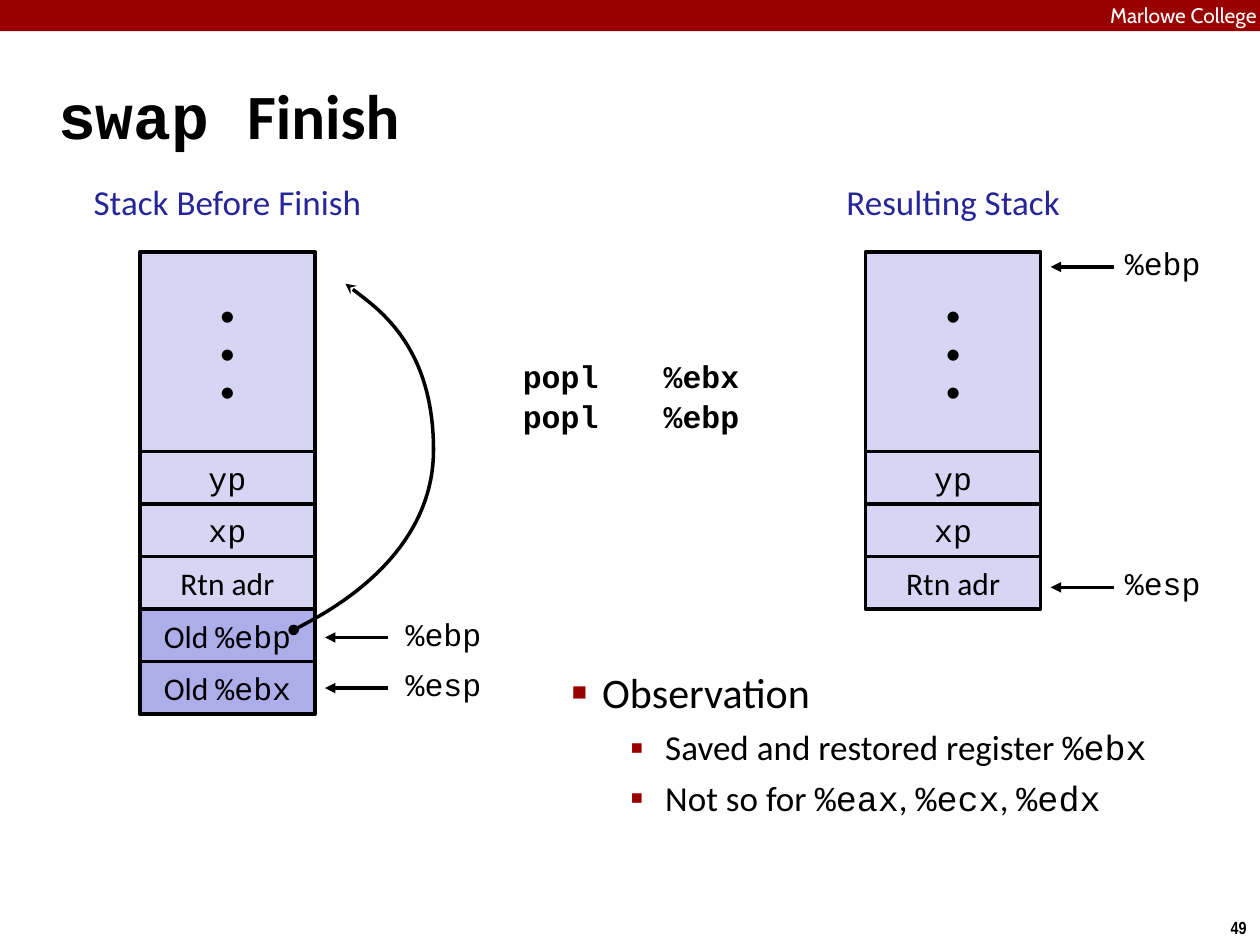
import dataclasses

import lxml.etree
import pptx
import pptx.dml.color
import pptx.enum.shapes
import pptx.enum.text
import pptx.oxml.ns
import pptx.util

Cm = pptx.util.Cm
Align = pptx.enum.text.PP_ALIGN
Anchor = pptx.enum.text.MSO_ANCHOR


@dataclasses.dataclass(frozen=True)
class Theme:
    """Colours, fonts and type sizes of the slide."""
    ink: str = "000000"
    paper: str = "FFFFFF"
    red: str = "990000"
    blue: str = "262699"
    pale: str = "D6D6F4"
    dark: str = "ADADEA"
    sans: str = "Calibri"
    mono: str = "Courier New"
    brand: str = "Cabin"
    small: str = "Arial Narrow"
    title: int = 36
    lead: int = 24
    head: int = 20
    text: int = 18
    bar: int = 12
    page: int = 10
    line: int = 2


T = Theme()


def rgb(code):
    """Turn a hex code into a colour."""
    return pptx.dml.color.RGBColor.from_string(code)


def apply(obj, fmt):
    """Set each attribute that a dict names."""
    for key, val in fmt.items():
        setattr(obj, key, val)


def node(parent, tag, **attrs):
    """Append a drawing element to a parent."""
    item = lxml.etree.SubElement(parent, pptx.oxml.ns.qn("a:" + tag))
    for key, val in attrs.items():
        item.set(key, str(val))
    return item


def place(shape, box):
    """Move a shape to a box given in centimetres."""
    apply(shape, dict(zip(("left", "top", "width", "height"), map(Cm, box))))


def write(para, text, size, color=T.ink, font=T.sans, bold=False, **fmt):
    """Fill a paragraph, with code between backticks in the mono font."""
    apply(para, fmt)
    for num, part in enumerate(text.split("`")):
        if part:
            run = para.add_run()
            run.text = part
            apply(run.font, {"size": pptx.util.Pt(size), "bold": bold,
                             "name": T.mono if num % 2 else font})
            run.font.color.rgb = rgb(color)


def fill(frame, lines, size, inset=0, anchor=Anchor.TOP, wrap=True, **fmt):
    """Set up a text frame and write its lines."""
    sides = ("left", "top", "right", "bottom")
    apply(frame, {"margin_" + side: Cm(inset) for side in sides})
    apply(frame, {"word_wrap": wrap, "vertical_anchor": anchor})
    for num, line in enumerate(lines):
        para = frame.add_paragraph() if num else frame.paragraphs[0]
        write(para, line, size, **fmt)


def label(slide, box, text, size, **fmt):
    """Add a one-line text box."""
    shape = slide.shapes.add_textbox(*map(Cm, box))
    fill(shape.text_frame, [text], size, **fmt)


def stroke(shape, head=None, tail=None):
    """Give a shape the black line and its ends."""
    shape.line.width = pptx.util.Pt(T.line)
    shape.line.color.rgb = rgb(T.ink)
    for tag, kind in (("headEnd", head), ("tailEnd", tail)):
        if kind:
            node(shape.line._get_or_add_ln(), tag, type=kind)


def block(slide, box, color):
    """Add a flat rectangle without a line."""
    kind = pptx.enum.shapes.MSO_SHAPE.RECTANGLE
    shape = slide.shapes.add_shape(kind, *map(Cm, box))
    shape.shadow.inherit = False
    shape.fill.solid()
    shape.fill.fore_color.rgb = rgb(color)
    shape.line.fill.background()
    return shape


def banner(slide, box):
    """Draw the top bar with the school name."""
    x, y, w, h = box
    block(slide, box, T.red)
    label(slide, (x + w - 3.02, y + 0.05, 3.02, 0.48), "Marlowe College",
          T.bar, color=T.paper, font=T.brand, wrap=False)


def title(slide, box):
    """Fill the title placeholder."""
    shape = slide.shapes.title
    place(shape, box)
    fill(shape.text_frame, ["`swap `Finish"], T.title, 0.1, Anchor.MIDDLE,
         bold=True, alignment=Align.LEFT)


def mark(slide, x, y, gap, name):
    """Draw a register label with an arrow to its left."""
    line = slide.shapes.add_connector(
        pptx.enum.shapes.MSO_CONNECTOR.STRAIGHT,
        Cm(x + 1.27), Cm(y), Cm(x), Cm(y))
    stroke(line, tail="triangle")
    node(line._element.spPr, "effectLst")
    label(slide, (x + 1.27 + gap, y - 0.46, 1.78, 0.91), f"`{name}`", T.text,
          wrap=False, alignment=Align.CENTER)


def stack(slide, box, head, cells, marks, gap):
    """Draw a headed stack with its register marks."""
    x, y, w, tall = box
    step = 1.06
    label(slide, (x - 1.1, y - 1.55, w + 2.2, 1.07), head, T.head, inset=0.1,
          color=T.blue, alignment=Align.CENTER)
    rows = [(y, tall, ["•"] * 3)]
    rows += [(y + tall + num * step, step, [cell])
             for num, cell in enumerate(cells)]
    for top, high, lines in rows:
        saved = lines[0].startswith("Old")
        shape = block(slide, (x, top, w, high), T.dark if saved else T.pale)
        stroke(shape)
        fill(shape.text_frame, lines, T.text, anchor=Anchor.MIDDLE,
             alignment=Align.CENTER)
    for name, drop in marks.items():
        mark(slide, x + w + 0.2, y + drop, gap, name)


def curve(slide, box):
    """Draw the saved pointer as two Bezier arcs in a box."""
    x, y, w, h = box
    spots = [(0, 1), (0, 1), (1, 0.8), (1, 0.48),
             (1, 0.17), (0.37, 0), (0.37, 0)]
    dots = [(Cm(x + a * w), Cm(y + b * h)) for a, b in spots]
    pen = slide.shapes.build_freeform(*dots[0])
    pen.add_line_segments(dots[1:], close=False)
    shape = pen.convert_to_shape()
    shape.shadow.inherit = False
    shape.fill.background()
    stroke(shape, "oval", "stealth")
    lines = list(shape._element.iter(pptx.oxml.ns.qn("a:lnTo")))
    trail = lines[0].getparent()
    for num in range(0, len(lines), 3):
        arc = node(trail, "cubicBezTo")
        for line in lines[num:num + 3]:
            arc.append(line[0])
            trail.remove(line)


def code(slide, box):
    """Write the two instructions on tab stops."""
    shape = slide.shapes.add_textbox(*map(Cm, box))
    fill(shape.text_frame, ["\tpopl\t%ebx", "\tpopl\t%ebp"], T.text,
         font=T.mono, bold=True, line_spacing=1.07)
    for para in shape.text_frame.paragraphs:
        tabs = node(para._p.get_or_add_pPr(), "tabLst")
        for stop in (1.27, 4.11):
            node(tabs, "tab", pos=Cm(stop), algn="l")


def notes(slide, box):
    """Fill the body placeholder with the bullet list."""
    shape = slide.placeholders[1]
    place(shape, box)
    frame = shape.text_frame
    fill(frame, ["Observation"], T.lead, 0.1, space_before=pptx.util.Pt(6))
    for line in ("Saved and restored register `%ebx`",
                 "Not so for `%eax`, `%ecx`, `%edx`"):
        write(frame.add_paragraph(), line, T.head, level=1,
              space_before=pptx.util.Pt(5))
    looks = (("■", 60, 0.61, 0.61), ("▪", 110, 1.88, 0.71))
    for para in frame.paragraphs:
        sign, size, left, hang = looks[para.level]
        prop = para._p.get_or_add_pPr()
        prop.set("marL", str(Cm(left)))
        prop.set("indent", str(-Cm(hang)))
        node(node(prop, "buClr"), "srgbClr", val=T.red)
        node(prop, "buSzPct", val=size * 1000)
        node(prop, "buChar", char=sign)


def main():
    """Build and save the slide."""
    deck = pptx.Presentation()
    apply(deck, {"slide_width": Cm(25.4), "slide_height": Cm(19.05)})
    slide = deck.slides.add_slide(deck.slide_layouts[1])
    cells = ["`yp`", "`xp`", "Rtn adr"]
    banner(slide, (0, 0, 25.4, 0.63))
    title(slide, (1.07, 0.71, 23.29, 3.18))
    stack(slide, (2.82, 5.08, 3.53, 4.02), "Stack Before Finish",
          cells + ["Old `%ebp`", "Old `%ebx`"],
          {"%ebp": 7.77, "%esp": 8.79}, 0.23)
    curve(slide, (5.92, 5.72, 2.82, 6.98))
    code(slide, (9.27, 7.14, 8.71, 3.02))
    stack(slide, (17.45, 5.08, 3.53, 4.02), "Resulting Stack", cells,
          {"%ebp": 0.3, "%esp": 6.76}, 0.1)
    notes(slide, (11.43, 13.34, 13.34, 4.09))
    label(slide, (24.54, 18.36, 0.86, 0.69), "49", T.page, inset=0.13,
          font=T.small, bold=True, wrap=False, alignment=Align.CENTER)
    deck.save("out.pptx")


if __name__ == "__main__":
    main()
